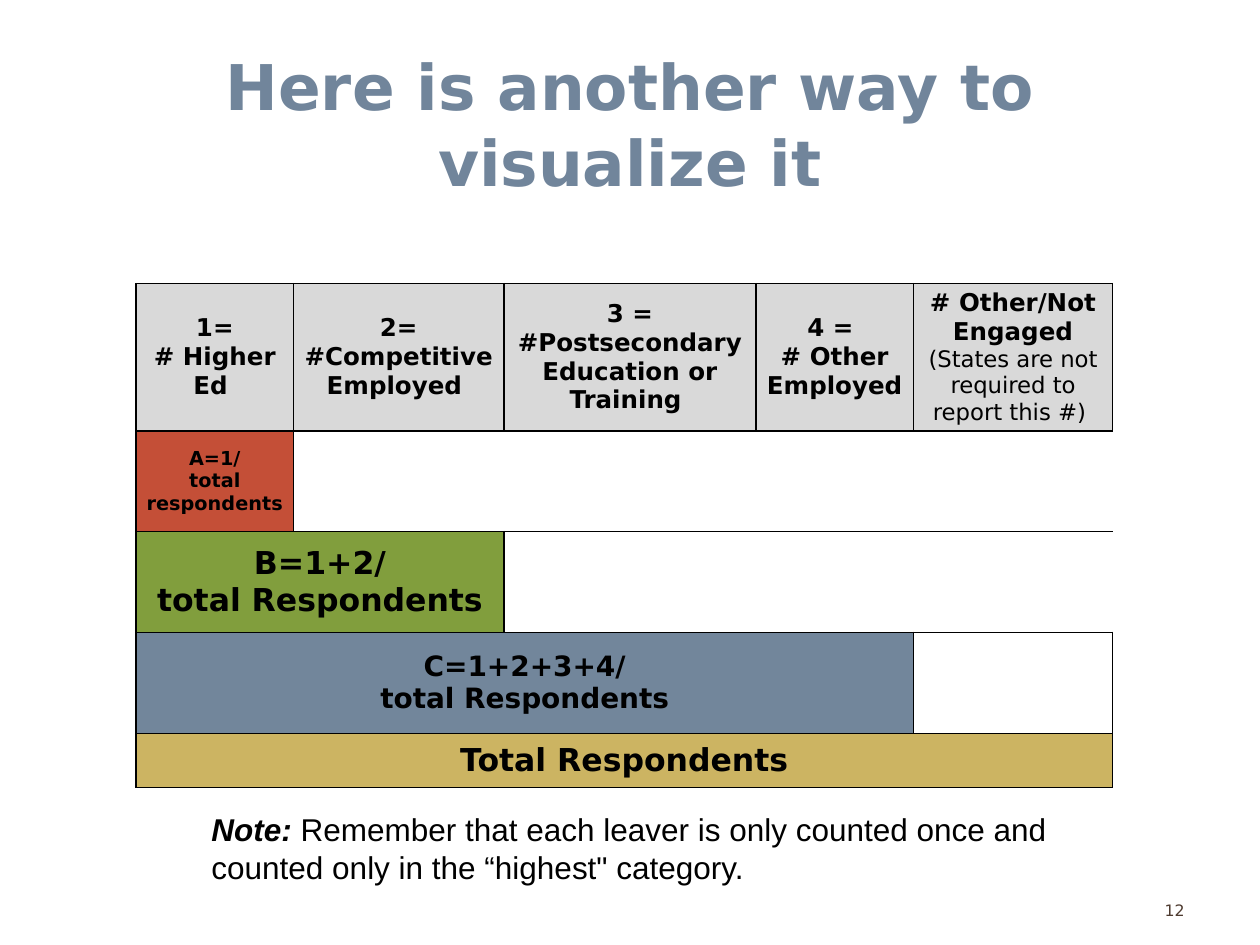
from dataclasses import dataclass

from lxml.etree import SubElement
from pptx import Presentation
from pptx.dml.color import RGBColor
from pptx.enum.text import MSO_ANCHOR, PP_ALIGN
from pptx.oxml.ns import qn
from pptx.util import Inches, Pt

COLORS = {
    "title": "71859B", "number": "4E3B30", "text": "000000", "border": "000000",
    "header": "D9D9D9", "red": "C44F37", "green": "819E3D",
    "blue": "72869B", "gold": "CCB462",
}
TABLE_FONT = "DejaVu Sans"
NOTE_FONT = "Arial"
NO_STYLE = "{2D5ABB26-0587-4C30-8999-92F81FD0307C}"
COLUMN_WIDTHS = (1.25, 1.67, 2, 1.25, 1.58)
ROW_HEIGHTS = (1.17, 0.8, 0.8, 0.8, 0.43)


@dataclass
class Bar:
    """A coloured cell that starts in the first column."""
    text: str
    columns: int
    size: float
    color: str


HEADERS = (
    "1=\v# Higher Ed ",
    "2=\v#Competitive Employed ",
    "3 =\n#Postsecondary Education or Training ",
    "4 = \n# Other Employed ",
    "# Other/Not Engaged ",
)
BARS = (
    Bar("A=1/\ntotal respondents", 1, 11, "red"),
    Bar("B=1+2/\ntotal Respondents", 2, 18, "green"),
    Bar("C=1+2+3+4/\ntotal Respondents", 4, 16, "blue"),
    Bar("Total Respondents", 5, 18, "gold"),
)


def format_span(span, size: float, color: str, name: str = TABLE_FONT,
                bold: bool = False, italic: bool = False) -> None:
    font = span.font
    font.name, font.size = name, Pt(size)
    font.bold, font.italic = bold, italic
    font.color.rgb = RGBColor.from_string(COLORS[color])


def add_text(page, left: float, top: float, width: float, height: float, text: str,
             align=PP_ALIGN.LEFT, anchor=MSO_ANCHOR.TOP):
    box = page.shapes.add_textbox(Inches(left), Inches(top), Inches(width), Inches(height))
    frame = box.text_frame
    frame.word_wrap = True
    frame.vertical_anchor = anchor
    frame.text = text
    para = frame.paragraphs[0]
    para.alignment = align
    return para


def set_borders(cell, sides: str) -> None:
    properties = cell._tc.get_or_add_tcPr()
    for position, side in enumerate(sides):
        line = SubElement(properties, qn(f"a:ln{side}"), w=str(Pt(1)))
        fill = SubElement(line, qn("a:solidFill"))
        SubElement(fill, qn("a:srgbClr"), val=COLORS["border"])
        # Lines come before the fill in the cell properties
        properties.insert(position, line)


def fill_cell(cell, text: str, size: float, color: str) -> None:
    cell.margin_left = cell.margin_right = Inches(0.07)
    cell.margin_top = cell.margin_bottom = 0
    cell.vertical_anchor = MSO_ANCHOR.MIDDLE
    cell.fill.solid()
    cell.fill.fore_color.rgb = RGBColor.from_string(COLORS[color])
    cell.text_frame.text = text
    for para in cell.text_frame.paragraphs:
        para.alignment = PP_ALIGN.CENTER
        for span in para.runs:
            format_span(span, size, "text", bold=True)
        for line_break in para._p.findall(qn("a:br")):
            SubElement(line_break, qn("a:rPr"), sz=str(int(size * 100)))


def add_bar(table, row: int, bar: Bar) -> None:
    last = len(COLUMN_WIDTHS) - 1
    first = table.cell(row, 0)
    if bar.columns > 1:
        first.merge(table.cell(row, bar.columns - 1))
    fill_cell(first, bar.text, bar.size, bar.color)
    for column in range(bar.columns):
        set_borders(table.cell(row, column), "LRTB")
    # The open space to the right of the bar
    if bar.columns <= last:
        space = table.cell(row, bar.columns)
        if bar.columns < last:
            space.merge(table.cell(row, last))
        for column in range(bar.columns, last + 1):
            cell = table.cell(row, column)
            cell.fill.background()
            sides = "L" if column == bar.columns else ""
            set_borders(cell, sides + ("T" if row == 1 else ""))


def add_table(page) -> None:
    frame = page.shapes.add_table(
        len(ROW_HEIGHTS), len(COLUMN_WIDTHS), Inches(1.08), Inches(2.25),
        Inches(sum(COLUMN_WIDTHS)), Inches(sum(ROW_HEIGHTS)))
    table = frame.table
    table.first_row = table.horz_banding = False
    table._tbl.tblPr.find(qn("a:tableStyleId")).text = NO_STYLE
    for column, width in zip(table.columns, COLUMN_WIDTHS):
        column.width = Inches(width)
    for row, height in zip(table.rows, ROW_HEIGHTS):
        row.height = Inches(height)

    # Header row
    for column, text in enumerate(HEADERS):
        cell = table.cell(0, column)
        fill_cell(cell, text, 14, "header")
        set_borders(cell, "LRTB")
    remark = table.cell(0, len(HEADERS) - 1).text_frame.paragraphs[0].add_run()
    remark.text = "(States are not required to report this #) "
    format_span(remark, 13, "text")

    # Bars
    for row, bar in enumerate(BARS, start=1):
        add_bar(table, row, bar)


def main() -> None:
    deck = Presentation()
    deck.slide_width, deck.slide_height = Inches(10), Inches(7.5)
    page = deck.slides.add_slide(deck.slide_layouts[6])

    # Slide number
    number = add_text(page, 7.17, 6.83, 2.33, 0.52, "12", PP_ALIGN.RIGHT, MSO_ANCHOR.BOTTOM)
    format_span(number.runs[0], 9, "number")

    add_table(page)

    # Title
    title = add_text(page, 1.25, 0.33, 7.5, 1.31,
                     "Here is another way to visualize it", PP_ALIGN.CENTER)
    format_span(title.runs[0], 36, "title", bold=True)

    # Note
    note = add_text(page, 1.58, 6.38, 6.83, 0.71, "Note: ")
    format_span(note.runs[0], 18, "text", NOTE_FONT, bold=True, italic=True)
    reminder = note.add_run()
    reminder.text = ("Remember that each leaver is only counted once and "
                     "counted only in the “highest\" category.")
    format_span(reminder, 18, "text", NOTE_FONT)

    deck.save("out.pptx")


if __name__ == "__main__":
    main()
